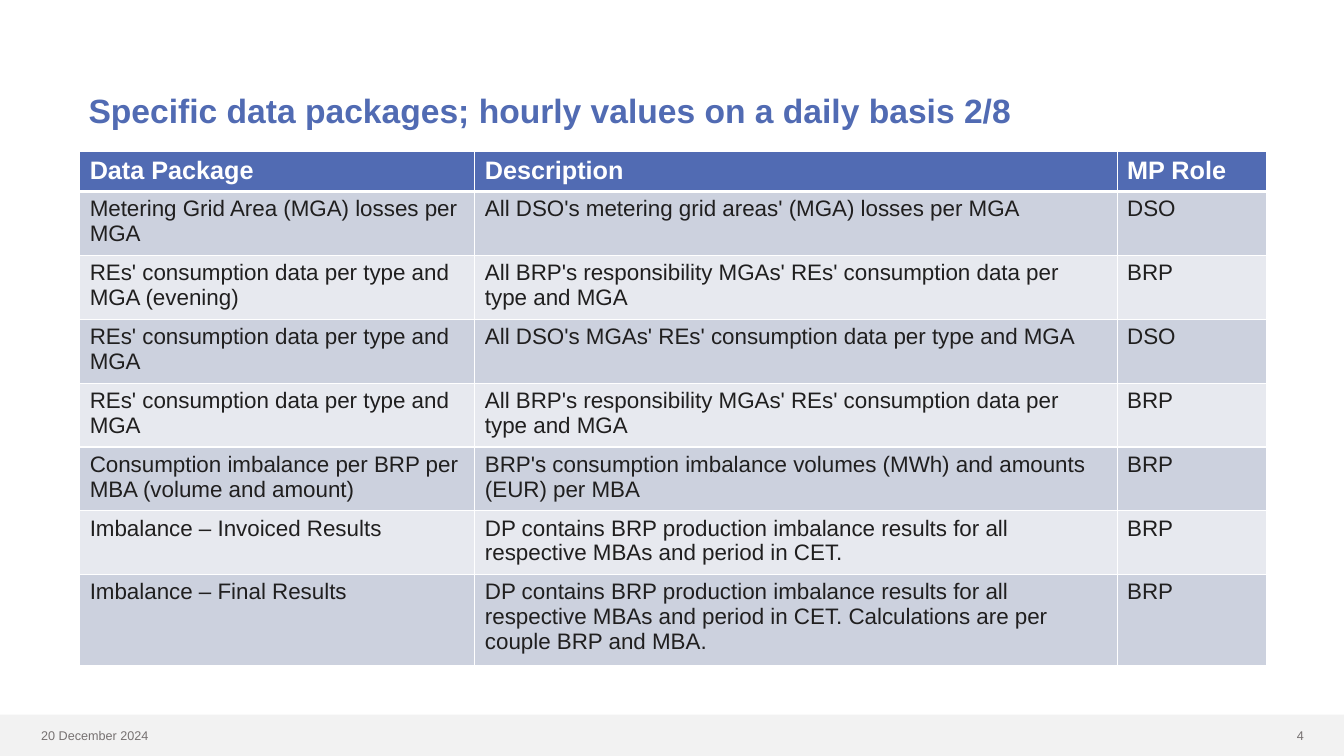
from lxml.etree import SubElement
from pptx import Presentation
from pptx.dml.color import RGBColor
from pptx.enum.shapes import MSO_SHAPE
from pptx.enum.text import MSO_ANCHOR, PP_ALIGN
from pptx.oxml.ns import qn
from pptx.util import Inches, Pt

COLORS = {
    "blue": "516BB3",
    "white": "FFFFFF",
    "ink": "201F1F",
    "dark": "CCD1DE",
    "light": "E7E9EF",
    "bar": "F2F2F2",
    "gray": "767171",
}
HEAD = ("Data Package", "Description", "MP Role")
ROWS = [
    ("Metering Grid Area (MGA) losses per MGA",
     "All DSO's metering grid areas' (MGA) losses per MGA", "DSO"),
    ("REs' consumption data per type and MGA (evening)",
     "All BRP's responsibility MGAs' REs' consumption data per type and MGA", "BRP"),
    ("REs' consumption data per type and MGA",
     "All DSO's MGAs' REs' consumption data per type and MGA", "DSO"),
    ("REs' consumption data per type and MGA",
     "All BRP's responsibility MGAs' REs' consumption data per type and MGA", "BRP"),
    ("Consumption imbalance per BRP per MBA (volume and amount)",
     "BRP's consumption imbalance volumes (MWh) and amounts (EUR) per MBA", "BRP"),
    ("Imbalance – Invoiced Results",
     "DP contains BRP production imbalance results for all respective MBAs "
     "and period in CET.", "BRP"),
    ("Imbalance – Final Results",
     "DP contains BRP production imbalance results for all respective MBAs "
     "and period in CET. Calculations are per couple BRP and MBA.", "BRP"),
]
WIDTHS = (3.92, 6.37, 1.48)
HEIGHTS = (0.4, *[0.59] * 6, 0.83)


def color(name):
    """Return the named colour."""
    return RGBColor.from_string(COLORS[name])


def write(frame, text, size, tint, bold=False):
    """Write one run into a text frame and return its paragraph."""
    para = frame.paragraphs[0]
    run = para.add_run()
    run.text = text
    run.font.name = "Arial"
    run.font.size = Pt(size)
    run.font.bold = bold
    run.font.color.rgb = color(tint)
    return para


def label(slide, box, text, size, tint, bold=False):
    """Add a wrapped, middle-anchored text box and return its paragraph."""
    frame = slide.shapes.add_textbox(*map(Inches, box)).text_frame
    frame.word_wrap = True
    frame.vertical_anchor = MSO_ANCHOR.MIDDLE
    return write(frame, text, size, tint, bold)


def border(cell, base):
    """Draw white cell borders, with the given bottom width in points."""
    props = cell._tc.get_or_add_tcPr()
    for side, width in (("L", 1), ("R", 1), ("T", 1), ("B", base)):
        line = SubElement(props, qn(f"a:ln{side}"), w=str(Pt(width)))
        fill = SubElement(line, qn("a:solidFill"))
        SubElement(fill, qn("a:srgbClr"), val=COLORS["white"])


def title(slide, box):
    """Place the slide title."""
    text = "Specific data packages; hourly values on a daily basis 2/8"
    label(slide, box, text, 24, "blue", True).line_spacing = 0.9


def grid(slide, box):
    """Place the table of data packages."""
    data = [HEAD, *ROWS]
    shape = slide.shapes.add_table(len(data), len(HEAD), *map(Inches, box))
    table = shape.table
    for col, width in zip(table.columns, WIDTHS):
        col.width = Inches(width)
    for row, height in zip(table.rows, HEIGHTS):
        row.height = Inches(height)
    for i, texts in enumerate(data):
        top = i == 0
        shade = "blue" if top else "dark" if i % 2 else "light"
        for j, text in enumerate(texts):
            cell = table.cell(i, j)
            border(cell, 3 if top else 1)
            cell.fill.solid()
            cell.fill.fore_color.rgb = color(shade)
            write(cell.text_frame, text, 18 if top else 16,
                  "white" if top else "ink", top)


def footer(slide, box):
    """Place the footer bar with date and slide number."""
    left, top, width, height = box
    bar = slide.shapes.add_shape(MSO_SHAPE.RECTANGLE, *map(Inches, box))
    bar.shadow.inherit = False
    bar.fill.solid()
    bar.fill.fore_color.rgb = color("bar")
    bar.line.fill.background()
    y = top + 0.08
    label(slide, (left + 0.31, y, 2.12, 0.25), "20 December 2024", 9, "gray")
    page = label(slide, (left + width - 1.12, y, 0.82, 0.25), "4", 9, "gray")
    page.alignment = PP_ALIGN.RIGHT


def main():
    """Build and save the slide."""
    deck = Presentation()
    deck.slide_width, deck.slide_height = Inches(13.33), Inches(7.5)
    slide = deck.slides.add_slide(deck.slide_layouts[6])
    footer(slide, (0, 7.09, 13.33, 0.41))
    title(slide, (0.78, 0.39, 11.73, 1.45))
    grid(slide, (0.79, 1.5, sum(WIDTHS), sum(HEIGHTS)))
    deck.save("out.pptx")


if __name__ == "__main__":
    main()
